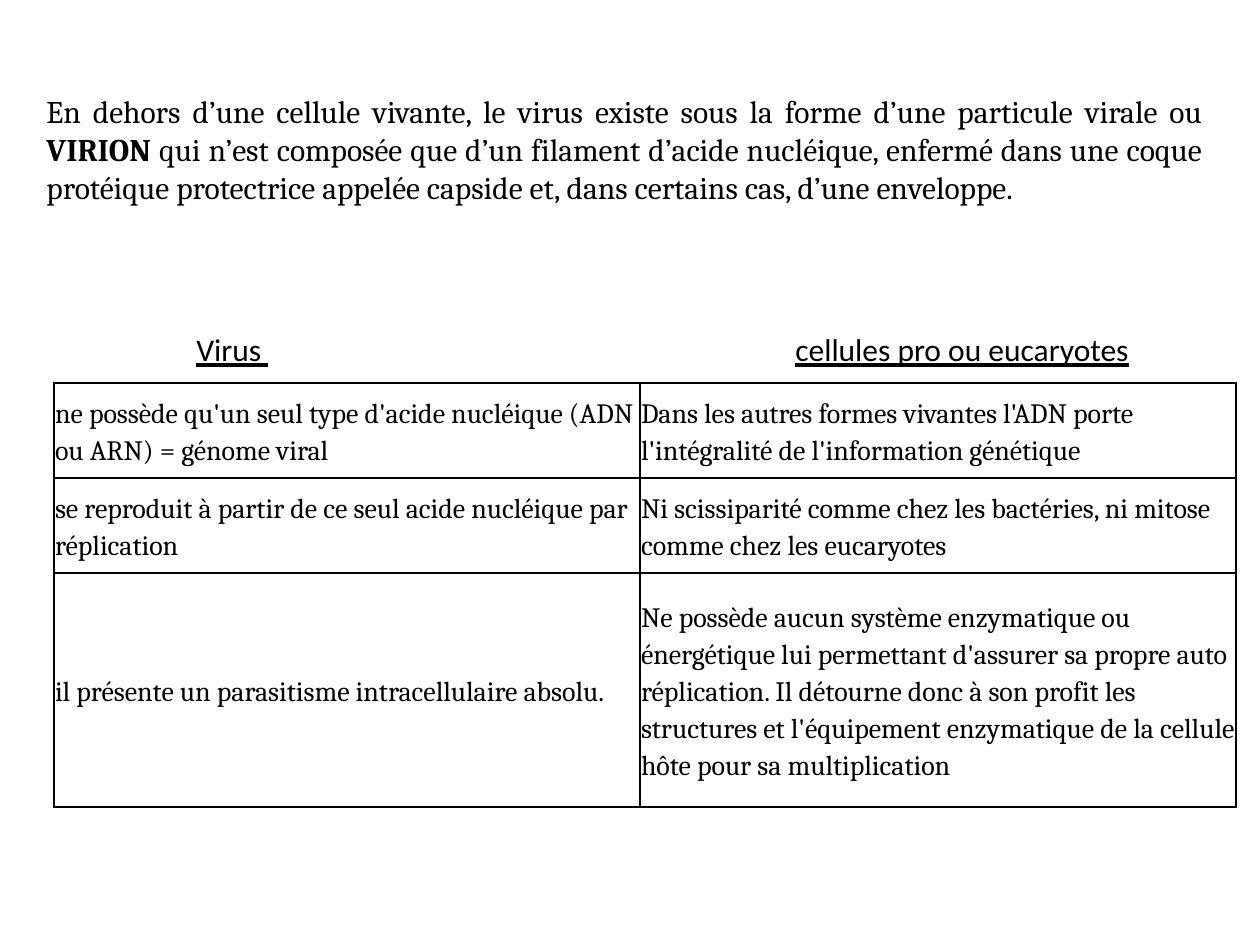
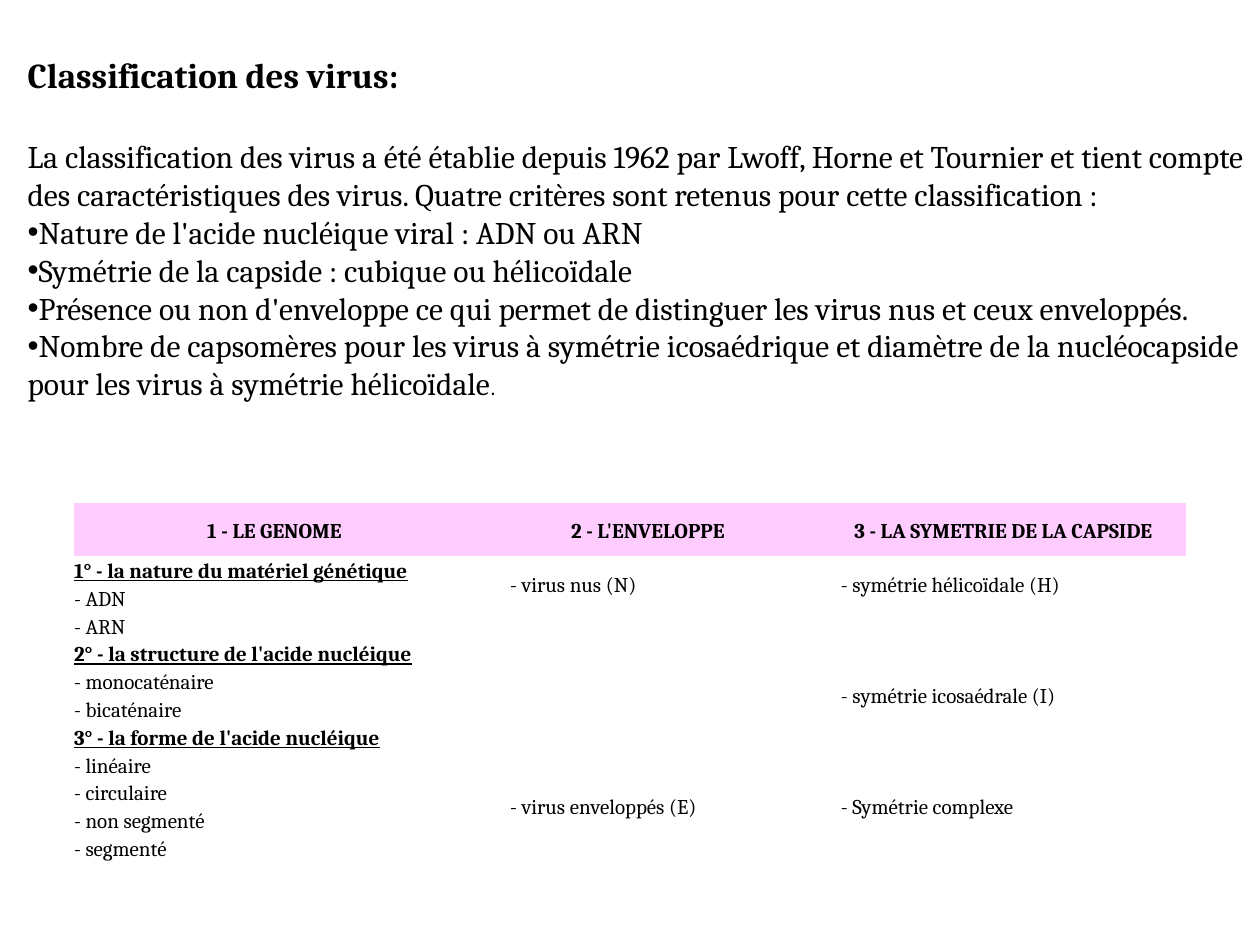
from lxml import etree
from pptx import Presentation
from pptx.dml.color import RGBColor
from pptx.enum.text import MSO_ANCHOR, MSO_AUTO_SIZE, PP_ALIGN
from pptx.oxml.ns import qn
from pptx.util import Pt

LEFT, MID, JUST = PP_ALIGN.LEFT, PP_ALIGN.CENTER, PP_ALIGN.JUSTIFY
TOP, CENTRE = MSO_ANCHOR.TOP, MSO_ANCHOR.MIDDLE
COLORS = {"ink": "000000", "head": "FFCCFF"}
SERIF, SANS = "Cambria", "Calibri"
PLAIN_GRID = "{2D5ABB26-0587-4C30-8999-92F81FD0307C}"
LINE = 15.86  # points from line to line in the criteria table

TRAITS = [
    ["ne possède qu'un seul type d'acide nucléique (ADN ou ARN) = génome viral",
     "Dans les autres formes vivantes l'ADN porte l'intégralité de "
     "l'information génétique"],
    ["se reproduit à partir de ce seul acide nucléique par réplication",
     "Ni scissiparité comme chez les bactéries, ni mitose comme chez les "
     "eucaryotes"],
    ["il présente un parasitisme intracellulaire absolu.",
     "Ne possède aucun système enzymatique ou énergétique lui permettant "
     "d'assurer sa propre auto réplication. Il détourne donc à son profit les "
     "structures et l'équipement enzymatique de la cellule hôte pour sa "
     "multiplication"],
]
POINTS = [
    "Nature de l'acide nucléique viral : ADN ou ARN",
    "Symétrie de la capside : cubique ou hélicoïdale",
    "Présence ou non d'enveloppe ce qui permet de distinguer les virus nus et "
    "ceux enveloppés.",
    "Nombre de capsomères pour les virus à symétrie icosaédrique et diamètre "
    "de la nucléocapside pour les virus à symétrie hélicoïdale",
]
HEADS = ["1 - LE GENOME", "2 - L'ENVELOPPE", "3 - LA SYMETRIE DE LA CAPSIDE"]
GENOME = [
    "1° - la nature du matériel génétique", "- ADN", "- ARN",
    "2° - la structure de l'acide nucléique", "- monocaténaire", "- bicaténaire",
    "3° - la forme de l'acide nucléique", "- linéaire", "- circulaire",
    "- non segmenté", "- segmenté",
]
COATS = ["- virus nus (N)", "- virus enveloppés (E)"]
SHAPES = ["- symétrie hélicoïdale (H)", "- symétrie icosaédrale (I)",
          "- Symétrie complexe"]


def px(num):
    return round(num * 914400 / 126)


def style(run, size, face=SERIF, bold=False, under=False):
    font = run.font
    font.size, font.name = Pt(size), face
    font.bold, font.underline = bold, under
    font.color.rgb = RGBColor.from_string(COLORS["ink"])


def add_run(para, text, size, **look):
    run = para.add_run()
    run.text = text
    style(run, size, **look)


def write(frame, lines, size, align=LEFT, **look):
    """Put one paragraph per line in the frame, all in one style."""
    frame.text = "\n".join(lines)
    for para in frame.paragraphs:
        para.alignment = align
        para.space_before = Pt(0)
        for run in para.runs:
            style(run, size, **look)


def indent(para, left, first=0):
    props = para._p.get_or_add_pPr()
    props.set("marL", str(px(left)))
    props.set("indent", str(px(first)))
    return props


def add_bullet(para):
    props = indent(para, 0, -15)
    tint = etree.SubElement(props, qn("a:buClr"))
    etree.SubElement(tint, qn("a:srgbClr"), val=COLORS["ink"])
    etree.SubElement(props, qn("a:buFont"), typeface="Arial")
    etree.SubElement(props, qn("a:buChar"), char="•")


def drop_bullet(para):
    etree.SubElement(indent(para, 0), qn("a:buNone"))


def place(shape, x, y, w, h):
    shape.left, shape.top, shape.width, shape.height = map(px, (x, y, w, h))
    frame = shape.text_frame
    frame.word_wrap = True
    frame.auto_size = MSO_AUTO_SIZE.NONE
    frame.vertical_anchor = TOP
    return frame


def add_text(slide, x, y, w, h):
    return place(slide.shapes.add_textbox(0, 0, 0, 0), x, y, w, h)


def add_grid(slide, x, y, widths, heights, inset):
    """Add a bare table whose cells have no fill and centred height."""
    box = map(px, (x, y, sum(widths), sum(heights)))
    shape = slide.shapes.add_table(len(heights), len(widths), *box)
    shape.element.find(".//" + qn("a:tableStyleId")).text = PLAIN_GRID
    table = shape.table
    table.first_row = table.horz_banding = False
    for col, width in zip(table.columns, widths):
        col.width = px(width)
    for row, height in zip(table.rows, heights):
        row.height = px(height)
    for cell in table.iter_cells():
        cell.fill.background()
        cell.vertical_anchor = CENTRE
        cell.margin_left = cell.margin_right = px(inset)
        cell.margin_top = cell.margin_bottom = px(inset)
    return table


def add_rules(cell):
    props = cell._tc.get_or_add_tcPr()
    for spot, side in enumerate(("lnL", "lnR", "lnT", "lnB")):
        line = etree.Element(qn("a:" + side), w=str(Pt(1)))
        fill = etree.SubElement(line, qn("a:solidFill"))
        etree.SubElement(fill, qn("a:srgbClr"), val=COLORS["ink"])
        props.insert(spot, line)


def fill_cell(cell, lines, size, **look):
    write(cell.text_frame, lines, size, **look)
    for para in cell.text_frame.paragraphs:
        para.line_spacing = 1.15


def fill_spread(cell, lines, left, skip):
    """Set lines apart by a number of skipped lines, with one free below."""
    fill_cell(cell, lines, 12)
    cell.margin_bottom = Pt(LINE)
    for num, para in enumerate(cell.text_frame.paragraphs):
        indent(para, left)
        para.space_before = Pt(round(skip * LINE, 1) if num else 0)


def build_virion(deck):
    slide = deck.slides.add_slide(deck.slide_layouts[6])
    para = add_text(slide, 34, 86, 1181, 165).paragraphs[0]
    para.alignment = JUST
    add_run(para, "En dehors d’une cellule vivante, le virus existe sous la "
            "forme d’une particule virale ou ", 18)
    add_run(para, "VIRION ", 18, bold=True)
    add_run(para, "qui n’est composée que d’un filament d’acide nucléique, "
            "enfermé dans une coque protéique protectrice appelée capside et, "
            "dans certains cas, d’une enveloppe.", 18)

    para = add_text(slide, 184, 324, 1045, 50).paragraphs[0]
    tabs = etree.SubElement(para._p.get_or_add_pPr(), qn("a:tabLst"))
    etree.SubElement(tabs, qn("a:tab"), pos=str(px(599)), algn="l")
    add_run(para, "Virus ", 18, face=SANS, under=True)
    add_run(para, "\t", 18, face=SANS)
    add_run(para, "cellules pro ou eucaryotes", 18, face=SANS, under=True)

    table = add_grid(slide, 54, 383, (586, 596), (95, 95, 234), 1)
    for row, texts in zip(table.rows, TRAITS):
        for cell, text in zip(row.cells, texts):
            fill_cell(cell, [text], 16)
            add_rules(cell)


def build_classes(deck):
    slide = deck.slides.add_slide(deck.slide_layouts[1])
    title = place(slide.shapes.title, 15, 47, 1245, 54)
    write(title, ["Classification des virus:"], 20, bold=True)

    body = place(slide.placeholders[1], 15, 131, 1245, 276)
    intro = ("La classification des virus a été établie depuis 1962 par Lwoff, "
             "Horne et Tournier et tient compte des caractéristiques des virus. "
             "Quatre critères sont retenus pour cette classification :")
    write(body, [intro] + POINTS, 18)
    first, *points = body.paragraphs
    drop_bullet(first)
    for para in points:
        add_bullet(para)
    add_run(points[-1], ".", 12, face="Arial")

    table = add_grid(slide, 74, 503, (401, 346, 365), (53, 291), 0)
    for cell, head in zip(table.rows[0].cells, HEADS):
        fill_cell(cell, [head], 12, align=MID, bold=True)
        cell.fill.solid()
        cell.fill.fore_color.rgb = RGBColor.from_string(COLORS["head"])
    genome, coats, shapes = table.rows[1].cells
    fill_cell(genome, GENOME, 12)
    for para in genome.text_frame.paragraphs:
        if "°" in para.text:
            style(para.runs[0], 12, bold=True, under=True)
    fill_spread(coats, COATS, 35, 7)
    fill_spread(shapes, SHAPES, 20, 3)


def main():
    deck = Presentation()
    deck.slide_width, deck.slide_height = px(1260), px(945)
    build_virion(deck)
    build_classes(deck)
    deck.save("out.pptx")


if __name__ == "__main__":
    main()
